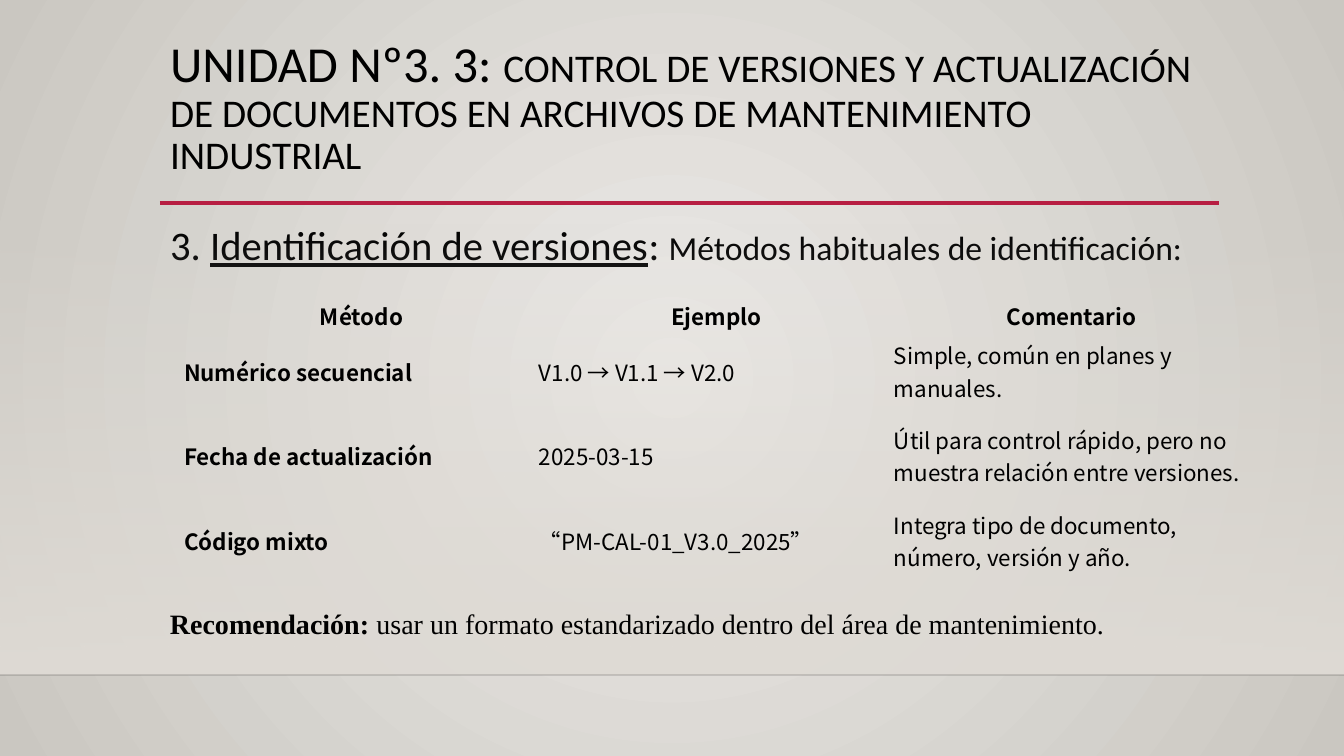
from pptx import Presentation
from pptx.dml.color import RGBColor
from pptx.enum.shapes import MSO_CONNECTOR, MSO_SHAPE
from pptx.enum.text import MSO_ANCHOR, MSO_AUTO_SIZE, PP_ALIGN
from pptx.oxml.ns import qn
from pptx.util import Emu, Pt
from lxml import etree

TOP, MIDDLE = MSO_ANCHOR.TOP, MSO_ANCHOR.MIDDLE
LEFT, CENTER = PP_ALIGN.LEFT, PP_ALIGN.CENTER
RECTANGLE = MSO_SHAPE.RECTANGLE
STRAIGHT = MSO_CONNECTOR.STRAIGHT
NO_AUTOSIZE = MSO_AUTO_SIZE.NONE

EMU_PER_PX = 914400 / 100.8
SLIDE_WIDTH, SLIDE_HEIGHT = 1344, 756
CONTENT_LEFT = 160
PLAIN_TABLE_STYLE = "{2D5ABB26-0587-4C30-8999-92F81FD0307C}"

HEADERS = ["Método", "Ejemplo", "Comentario"]
METHODS = [
    ["Numérico secuencial", "V1.0 → V1.1 → V2.0",
     "Simple, común en planes y manuales."],
    ["Fecha de actualización", "2025-03-15",
     "Útil para control rápido, pero no muestra relación entre versiones."],
    ["Código mixto", "“PM-CAL-01_V3.0_2025”",
     "Integra tipo de documento, número, versión y año."],
]


def px(length):
    return Emu(round(length * EMU_PER_PX))


def color(value):
    return RGBColor.from_string(value)


def add_child(parent, tag, **attributes):
    return etree.SubElement(parent, qn(tag), attributes)


def set_alpha(element, percent):
    for rgb in element.iter(qn("a:srgbClr")):
        add_child(rgb, "a:alpha", val=str(percent * 1000))


def set_gradient(fill, start, end):
    fill.gradient()
    for stop, value, position in zip(fill.gradient_stops, (start, end), (0, 1)):
        stop.color.rgb = color(value)
        stop.position = position


def add_background(slide):
    set_gradient(slide.background.fill, "ECEAE7", "CAC7C1")
    gradient = next(slide.element.iter(qn("a:gradFill")))
    gradient.remove(gradient.find(qn("a:lin")))
    circle = add_child(gradient, "a:path", path="circle")
    add_child(circle, "a:fillToRect", l="50000", t="50000", r="50000", b="50000")


def add_fading_panel(slide, left, top, width, height, value):
    panel = slide.shapes.add_shape(RECTANGLE, px(left), px(top), px(width), px(height))
    panel.shadow.inherit = False
    panel.line.fill.background()
    set_gradient(panel.fill, value, value)
    gradient = next(panel._element.iter(qn("a:gradFill")))
    gradient.find(qn("a:lin")).set("ang", "5400000")
    set_alpha(gradient.find(qn("a:gsLst"))[0], 0)


def add_rule(slide, left, right, y, value, width, alpha=100):
    rule = slide.shapes.add_connector(STRAIGHT, px(left), px(y), px(right), px(y))
    rule.line.color.rgb = color(value)
    rule.line.width = Pt(width)
    if alpha < 100:
        set_alpha(rule.line._ln, alpha)
    add_child(rule._element.spPr, "a:effectLst")


def add_run(paragraph, text, size, font, bold=False, underline=False):
    run = paragraph.add_run()
    run.text = text
    run.font.size = Pt(size)
    run.font.bold = bold
    run.font.underline = underline
    run.font.color.rgb = color("000000")
    run.font.name = font
    add_child(run._r.get_or_add_rPr(), "a:ea", typeface=font)


def place_text(shape, left, top, width, height):
    shape.left, shape.top = px(left), px(top)
    shape.width, shape.height = px(width), px(height)
    frame = shape.text_frame
    frame.word_wrap = True
    frame.auto_size = NO_AUTOSIZE
    frame.vertical_anchor = TOP
    paragraph = frame.paragraphs[0]
    paragraph.alignment = LEFT
    return paragraph


def fill_cell(cell, text, bold, alignment):
    cell.fill.background()
    cell.margin_left = cell.margin_right = cell.margin_top = cell.margin_bottom = 0
    cell.vertical_anchor = MIDDLE
    paragraph = cell.text_frame.paragraphs[0]
    paragraph.alignment = alignment
    add_run(paragraph, text, 16, "Noto Sans CJK SC", bold)


def add_methods_table(slide, left, top, column_width, row_heights):
    rows = [HEADERS] + METHODS
    frame = slide.shapes.add_table(
        len(rows), len(HEADERS), px(left), px(top),
        px(column_width * len(HEADERS)), px(sum(row_heights)))
    table = frame.table
    table.first_row = table.horz_banding = False
    table._tbl.tblPr.find(qn("a:tableStyleId")).text = PLAIN_TABLE_STYLE
    for column in table.columns:
        column.width = px(column_width)
    for row_index, texts in enumerate(rows):
        table.rows[row_index].height = px(row_heights[row_index])
        header = row_index == 0
        for column_index, text in enumerate(texts):
            fill_cell(table.cell(row_index, column_index), text,
                      header or column_index == 0, CENTER if header else LEFT)


def main():
    presentation = Presentation()
    presentation.slide_width = px(SLIDE_WIDTH)
    presentation.slide_height = px(SLIDE_HEIGHT)
    slide = presentation.slides.add_slide(presentation.slide_layouts[1])
    title, body = slide.placeholders

    # Backdrop
    add_background(slide)
    add_fading_panel(slide, 0, 223, SLIDE_WIDTH, 452, "DFDBD5")
    add_rule(slide, 0, SLIDE_WIDTH, 675, "000001", 1, alpha=20)
    add_rule(slide, CONTENT_LEFT, 1219, 203, "B71E42", 2.5)

    # Title
    paragraph = place_text(title, CONTENT_LEFT, 34, 1058, 187)
    paragraph.line_spacing = 0.9
    add_run(paragraph, "UNIDAD Nº3. 3: ", 36, "Calibri")
    add_run(paragraph, "CONTROL DE VERSIONES Y ACTUALIZACIÓN DE DOCUMENTOS "
            "EN ARCHIVOS DE MANTENIMIENTO INDUSTRIAL", 28, "Calibri")

    # Section heading
    paragraph = place_text(body, CONTENT_LEFT, 208, 1058, 480)
    properties = paragraph._p.get_or_add_pPr()
    properties.set("marL", "228600")
    properties.set("indent", "-228600")
    add_child(properties, "a:buNone")
    paragraph.line_spacing = 1.15
    paragraph.space_before = Pt(0)
    paragraph.space_after = Pt(8)
    add_run(paragraph, "3. ", 29, "Calibri")
    add_run(paragraph, "Identificación de versiones", 29, "Calibri", underline=True)
    add_run(paragraph, ": ", 29, "Calibri")
    add_run(paragraph, "Métodos habituales de identificación:", 24, "Calibri")

    # Identification methods
    add_methods_table(slide, 184, 292, 355, [47, 60, 105, 60])

    # Recommendation
    note = slide.shapes.add_textbox(0, 0, 0, 0)
    paragraph = place_text(note, CONTENT_LEFT, 602, 1090, 86)
    add_run(paragraph, "Recomendación:", 20, "Times New Roman", bold=True)
    add_run(paragraph, "\u00a0usar un formato estandarizado dentro del área de "
            "mantenimiento.".replace("\u00a0", " "), 20, "Times New Roman")

    presentation.save("out.pptx")


if __name__ == "__main__":
    main()
